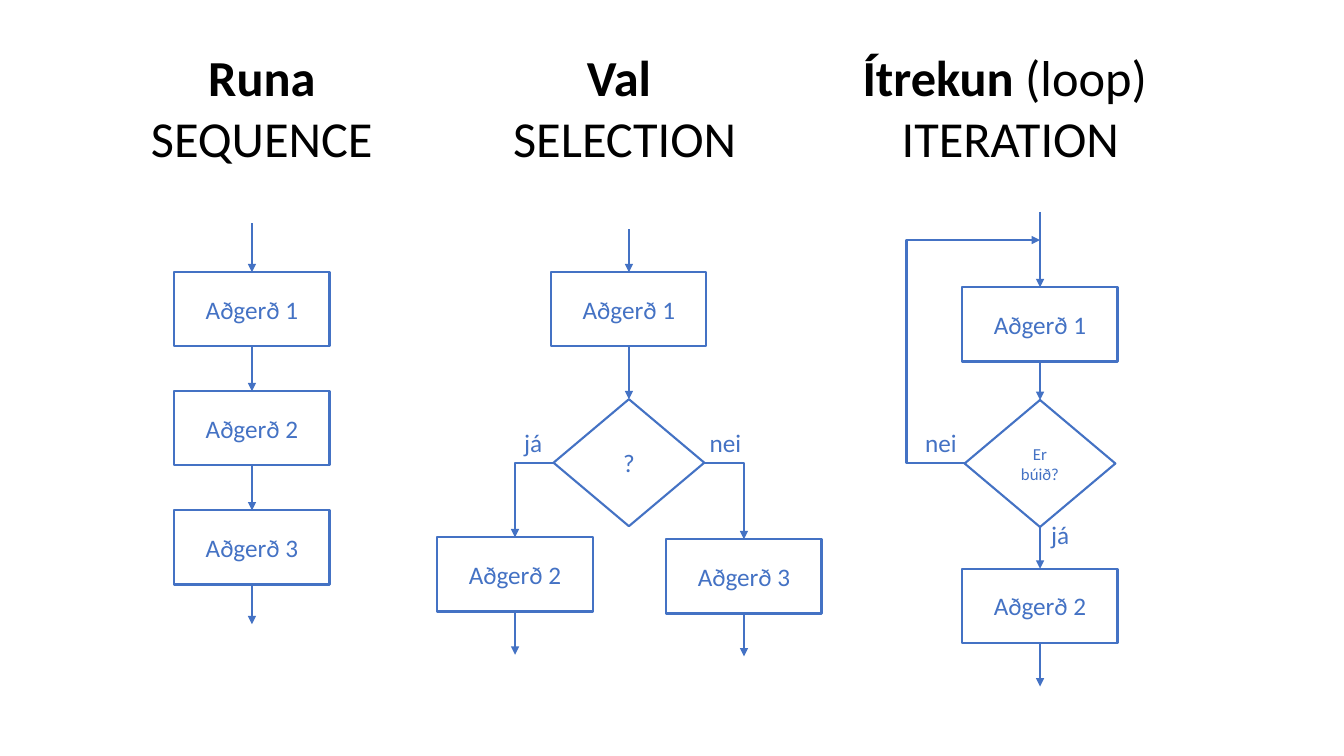
from lxml import etree
from pptx import Presentation
from pptx.dml.color import RGBColor
from pptx.enum import shapes, text
from pptx.oxml import ns
from pptx.util import Cm, Pt

BLUE = RGBColor(0x44, 0x72, 0xC4)
BLACK = RGBColor(0, 0, 0)
RECT, DIAMOND = shapes.MSO_SHAPE.RECTANGLE, shapes.MSO_SHAPE.DIAMOND
STRAIGHT, ELBOW = shapes.MSO_CONNECTOR.STRAIGHT, shapes.MSO_CONNECTOR.ELBOW

prs = Presentation()
prs.slide_width, prs.slide_height = Cm(33.87), Cm(19.05)
slide = prs.slides.add_slide(prs.slide_layouts[6])


def write(sp, lines, size, color):
    """Fill a shape with centred lines, each a list of (text, bold) runs."""
    tf = sp.text_frame
    tf.word_wrap = True
    for i, runs in enumerate(lines):
        p = tf.paragraphs[0] if i == 0 else tf.add_paragraph()
        p.alignment = text.PP_ALIGN.CENTER
        for words, bold in runs:
            r = p.add_run()
            r.text = words
            r.font.color.rgb = color
            for name, value in {"name": "Calibri", "size": Pt(size), "bold": bold}.items():
                setattr(r.font, name, value)


def arrow(kind, x1, y1, x2, y2):
    """Add a blue connector with an arrowhead at its end; return its geometry."""
    c = slide.shapes.add_connector(kind, Cm(x1), Cm(y1), Cm(x2), Cm(y2))
    c.line.color.rgb = BLUE
    c.line.width = Pt(1.5)
    etree.SubElement(c.line._get_or_add_ln(), ns.qn("a:tailEnd"), type="triangle")
    sp_pr = c._element.spPr
    etree.SubElement(sp_pr, ns.qn("a:effectLst"))
    return sp_pr.find(ns.qn("a:prstGeom"))


# Headings: left, width, lines
for left, width, lines in [
    (3.07, 7.06, [[("Runa", True)], [("SEQUENCE", False)]]),
    (12.24, 7.01, [[("Val ", True)], [("SELECTION", False)]]),
    (20.93, 9.07, [[("Ítrekun", True), (" (loop) ", False)], [("ITERATION", False)]]),
]:
    sp = slide.shapes.add_textbox(Cm(left), Cm(1.04), Cm(width), Cm(3.33))
    write(sp, lines, 36, BLACK)

# Centre lines of the columns and of the two branches
SEQ, SEL, ITER = 6.35, 15.85, 26.21
YES, NO = 12.98, 18.75
BOX_W, BOX_H = 3.91, 1.87
DIA_W, DIA_H = 3.8, 3.2
SEQ_TOP, SEQ_STEP = 6.86, 3
SEL_DIA, ITER_DIA = 10.06, 10.08
YES_TOP, NO_TOP = 13.54, 13.59
ITER_TOP, ITER_END = 7.24, 14.33

# Steps and decisions: shape, centre x, top, words, text size
steps = [(RECT, SEQ, SEQ_TOP + i * SEQ_STEP, f"Aðgerð {i + 1}", 18) for i in range(3)]
steps += [
    (RECT, SEL, SEQ_TOP, "Aðgerð 1", 18),
    (DIAMOND, SEL, SEL_DIA, "?", 18),
    (RECT, YES, YES_TOP, "Aðgerð 2", 18),
    (RECT, NO, NO_TOP, "Aðgerð 3", 18),
    (RECT, ITER, ITER_TOP, "Aðgerð 1", 18),
    (DIAMOND, ITER, ITER_DIA, "Er búið?", 12),
    (RECT, ITER, ITER_END, "Aðgerð 2", 18),
]
for kind, x, top, words, size in steps:
    w, h = (BOX_W, BOX_H) if kind == RECT else (DIA_W, DIA_H)
    sp = slide.shapes.add_shape(kind, Cm(x - w / 2), Cm(top), Cm(w), Cm(h))
    sp.shadow.inherit = False
    sp.fill.background()
    sp.line.color.rgb = BLUE
    sp.line.width = Pt(1.5)
    sp.text_frame.vertical_anchor = text.MSO_ANCHOR.MIDDLE
    write(sp, [[(words, False)]], size, BLUE)

# Downward arrows: x, start, end
for x, start, end in [
    (SEQ, 5.62, SEQ_TOP),
    (SEQ, SEQ_TOP + BOX_H, SEQ_TOP + SEQ_STEP),
    (SEQ, SEQ_TOP + SEQ_STEP + BOX_H, SEQ_TOP + 2 * SEQ_STEP),
    (SEQ, SEQ_TOP + 2 * SEQ_STEP + BOX_H, 15.73),
    (SEL, 5.78, SEQ_TOP),
    (SEL, SEQ_TOP + BOX_H, SEL_DIA),
    (YES, YES_TOP + BOX_H, 16.5),
    (NO, NO_TOP + BOX_H, 16.54),
    (ITER, 5.34, ITER_TOP),
    (ITER, ITER_TOP + BOX_H, ITER_DIA),
    (ITER, ITER_DIA + DIA_H, ITER_END),
    (ITER, ITER_END + BOX_H, 17.3),
]:
    arrow(STRAIGHT, x, start, x, end)

# Branches of the selection, with a single bend
for side, x, top in [(-1, YES, YES_TOP), (1, NO, NO_TOP)]:
    geom = arrow(ELBOW, SEL + side * DIA_W / 2, SEL_DIA + DIA_H / 2, x, top)
    geom.set("prst", "bentConnector2")

# Loop back, bending out to the left of the decision
geom = arrow(ELBOW, ITER - DIA_W / 2, ITER_DIA + DIA_H / 2, ITER, 6.05)
guides = geom.find(ns.qn("a:avLst"))
if guides is None:
    guides = etree.SubElement(geom, ns.qn("a:avLst"))
etree.SubElement(guides, ns.qn("a:gd"), name="adj1", fmla="val -77100")

# Answers: words, centre x, centre y, width
for words, x, y, w in [
    ("já", 13.44, 11.14, 1.73),
    ("nei", 18.28, 11.14, 2.16),
    ("nei", 23.71, 11.16, 2.16),
    ("já", 26.72, 13.47, 1.73),
]:
    sp = slide.shapes.add_textbox(Cm(x - w / 2), Cm(y - 0.75), Cm(w), Cm(1.5))
    sp.text_frame.vertical_anchor = text.MSO_ANCHOR.MIDDLE
    write(sp, [[(words, False)]], 18, BLUE)

prs.save("out.pptx")
